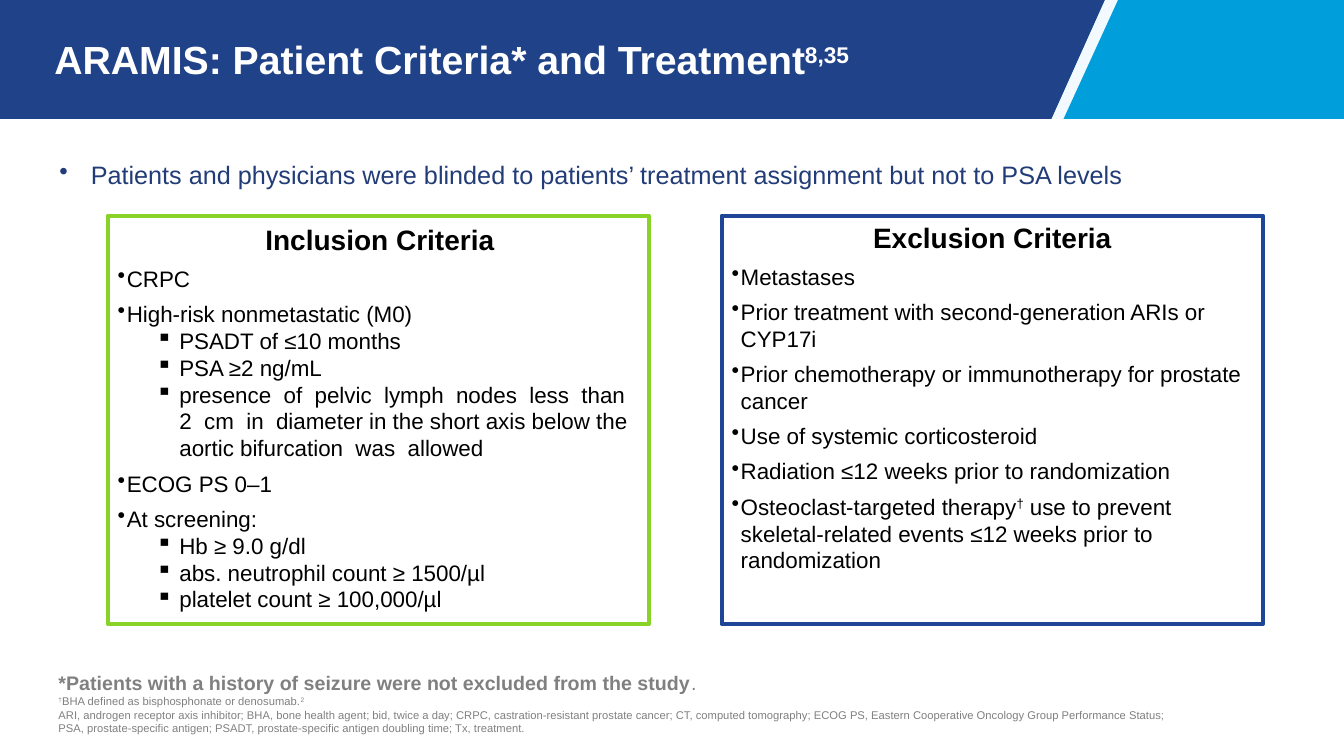
from dataclasses import dataclass
from pptx import Presentation
from pptx.dml.color import RGBColor as Rgb
from pptx.enum.shapes import MSO_SHAPE as Kind
from pptx.enum.text import MSO_ANCHOR as Anchor, PP_ALIGN as Align
from pptx.oxml import parse_xml
from pptx.oxml.ns import nsdecls
from pptx.util import Inches, Pt


@dataclass(frozen=True)
class Theme:
    face: str = "Arial"
    white: str = "FFFFFF"
    black: str = "000000"
    navy: str = "1F4288"
    sky: str = "009EDB"
    pale: str = "F3FAFF"
    ink: str = "223C78"
    gray: str = "808080"
    green: str = "89D329"
    blue: str = "1F4597"
    title: int = 28
    head: int = 20
    lead: int = 18
    body: int = 16
    note: int = 14
    tiny: int = 8


def write(para, text, size, color, bold=False, face=Theme.face):
    for i, part in enumerate(text.split("^")):
        if not part:
            continue
        run = para.add_run()
        run.text = part
        font = run.font
        font.name, font.size, font.bold = face, Pt(size), bold
        font.color.rgb = Rgb.from_string(color)
        if i % 2:
            run._r.get_or_add_rPr().set("baseline", "30000")


class Deck:
    cols, rows = 80, 45

    def __init__(self, theme):
        self.theme = theme
        self.file = Presentation()
        self.file.slide_width = Inches(13.33)
        self.file.slide_height = Inches(7.5)
        self.slide = self.file.slides.add_slide(self.file.slide_layouts[6])

    def x(self, col):
        return round(self.file.slide_width * col / self.cols)

    def y(self, row):
        return round(self.file.slide_height * row / self.rows)

    def place(self, area):
        left, top, wide, high = area
        return self.x(left), self.y(top), self.x(wide), self.y(high)

    def paint(self, shape, fill=None, line=None):
        shape.shadow.inherit = False
        if fill:
            shape.fill.solid()
            shape.fill.fore_color.rgb = Rgb.from_string(fill)
        else:
            shape.fill.background()
        if line:
            shape.line.color.rgb = Rgb.from_string(line)
            shape.line.width = Pt(3)
        else:
            shape.line.fill.background()
        return shape

    def rect(self, area, fill=None, line=None):
        shape = self.slide.shapes.add_shape(Kind.RECTANGLE, *self.place(area))
        return self.paint(shape, fill, line)

    def poly(self, dots, fill):
        first, *rest = [(self.x(c), self.y(r)) for c, r in dots]
        pen = self.slide.shapes.build_freeform(*first)
        pen.add_line_segments(rest, close=True)
        return self.paint(pen.convert_to_shape(), fill)

    def frame(self, shape, inset=(7.2, 3.6, 7.2, 3.6), anchor=Anchor.TOP):
        frame = shape.text_frame
        frame.word_wrap = True
        frame.vertical_anchor = anchor
        (frame.margin_left, frame.margin_top,
         frame.margin_right, frame.margin_bottom) = map(Pt, inset)
        return frame

    def text(self, area, **style):
        return self.frame(self.slide.shapes.add_textbox(*self.place(area)), **style)

    def para(self, frame, before=0, after=0, align=Align.LEFT, level=0,
             mark=None, left=0, hang=0):
        para = frame.paragraphs[0]
        if para.runs:
            para = frame.add_paragraph()
        para.alignment, para.level = align, level
        para.space_before, para.space_after = Pt(before), Pt(after)
        if mark:
            props = para._p.get_or_add_pPr()
            props.set("marL", str(Pt(left)))
            props.set("indent", str(-Pt(hang)))
            props.append(parse_xml(f'<a:buChar {nsdecls("a")} char="{mark}"/>'))
        return para

    def panel(self, area, line, head, items, fill=None, **style):
        theme = self.theme
        frame = self.frame(self.rect(area, fill, line), **style)
        write(self.para(frame, align=Align.CENTER), head, theme.head, theme.black, True)
        for text, form in items:
            write(self.para(frame, **form), text, theme.body, theme.black)


def main():
    theme = Theme()
    deck = Deck(theme)
    base = 7.08
    deck.rect((62.58, 0, 17.42, base), theme.sky)
    deck.poly([(65.76, 0), (66.54, 0), (63.3, base), (62.58, base)], theme.pale)
    deck.poly([(0, 0), (65.76, 0), (62.58, base), (0, base)], theme.navy)

    title = deck.text((3.24, 0.84, 57, 5.82), inset=(0, 3.6, 7.2, 3.6),
                      anchor=Anchor.MIDDLE)
    line = deck.para(title)
    line.line_spacing = 0.85
    write(line, "ARAMIS: Patient Criteria* and Treatment^8,35^",
          theme.title, theme.white, True)

    lead = deck.text((2.94, 9.18, 75, 3.18))
    write(deck.para(lead, after=6, mark="•", left=22.5, hang=22.5),
          "Patients and physicians were blinded to patients’ treatment assignment "
          "but not to PSA levels", theme.lead, theme.ink)

    foot = deck.text((3.48, 39.96, 66.84, 3.84), inset=(0, 0, 0, 0))
    line = deck.para(foot)
    write(line, "*Patients with a history of seizure were not excluded from the study",
          theme.note, theme.gray, True)
    write(line, ".", theme.note, theme.gray)
    for text in (
        "^†^BHA defined as bisphosphonate or denosumab.^2^",
        "ARI, androgen receptor axis inhibitor; BHA, bone health agent; bid, twice a day; "
        "CRPC, castration-resistant prostate cancer; CT, computed tomography; ECOG PS, "
        "Eastern Cooperative Oncology Group Performance Status; PSA, prostate-specific "
        "antigen; PSADT, prostate-specific antigen doubling time; Tx, treatment.",
    ):
        write(deck.para(foot), text, theme.tiny, theme.gray)

    dot = dict(mark="•", left=6.5, hang=6.5)
    main_dot = dict(dot, before=6)
    sub = dict(mark="▪", left=44, hang=16.5, level=1)
    last = dict(dot, after=6)
    left, step, top, wide, high = 6.42, 36.54, 12.84, 32.22, 24.3
    deck.panel((left, top, wide, high), theme.green, "Inclusion Criteria", [
        ("CRPC", main_dot),
        ("High-risk nonmetastatic (M0)", main_dot),
        ("PSADT of ≤10 months", sub),
        ("PSA ≥2 ng/mL", sub),
        ("presence  of  pelvic  lymph  nodes  less  than  2  cm  in  diameter in the "
         "short axis below the aortic bifurcation  was  allowed", sub),
        ("ECOG PS 0–1", main_dot),
        ("At screening:", main_dot),
        ("Hb ≥ 9.0 g/dl", sub),
        ("abs. neutrophil count ≥ 1500/µl", sub),
        ("platelet count ≥ 100,000/µl", sub),
    ], inset=(7.2, 5, 5, 5))
    deck.panel((left + step, top, wide, high), theme.blue, "Exclusion Criteria", [
        ("Metastases", dict(last, before=6)),
        ("Prior treatment with second-generation ARIs or CYP17i", last),
        ("Prior chemotherapy or immunotherapy for prostate cancer", last),
        ("Use of systemic corticosteroid", last),
        ("Radiation ≤12 weeks prior to randomization", last),
        ("Osteoclast-targeted therapy^†^ use to prevent skeletal-related events "
         "≤12 weeks prior to randomization", last),
    ], fill=theme.white)
    deck.file.save("out.pptx")


if __name__ == "__main__":
    main()
